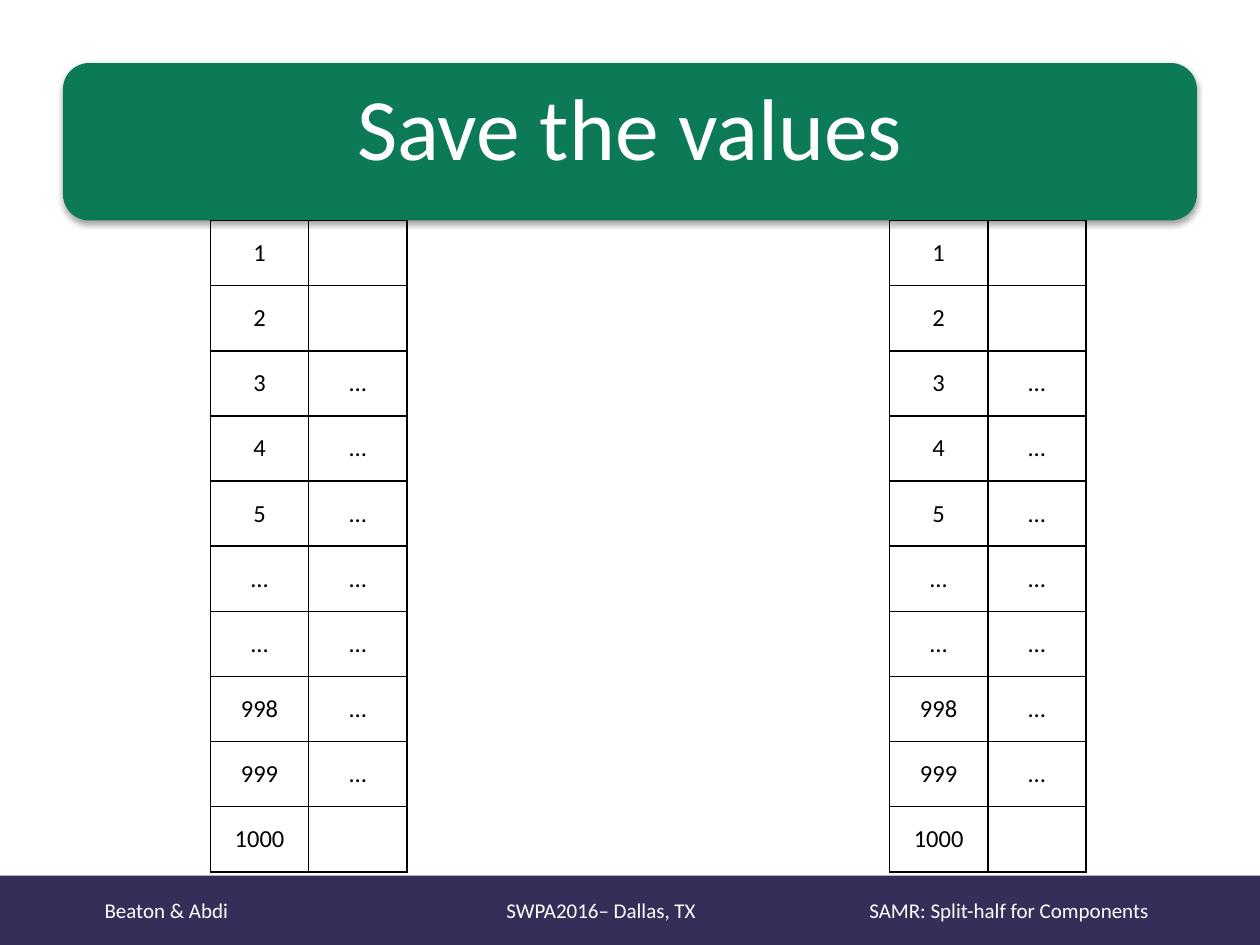
import dataclasses

import lxml.etree
import pptx
import pptx.dml.color
import pptx.enum.shapes
import pptx.enum.text
import pptx.oxml
import pptx.oxml.ns
import pptx.util

Inches = pptx.util.Inches
Pt = pptx.util.Pt
Align = pptx.enum.text.PP_ALIGN
Anchor = pptx.enum.text.MSO_ANCHOR
Shape = pptx.enum.shapes.MSO_SHAPE


@dataclasses.dataclass(frozen=True)
class Theme:
    font: str = "Calibri"
    green: str = "0C7A57"
    purple: str = "342F59"
    light: str = "FFFFFF"
    dark: str = "000000"
    title_size: float = 50
    cell_size: float = 14
    footer_size: float = 12
    border_width: float = 1


THEME = Theme()
WIDTH, HEIGHT = 10, 7.5
BANNER = (0.5, 0.5, 9, 1.25)
FOOTER = (0, 6.95, WIDTH, 0.55)
FOOTER_STARTS = (0.83, 4.02, 6.9)
FOOTER_PARTS = ("Beaton & Abdi", "SWPA2016– Dallas, TX", "SAMR: Split-half for Components")
TABLE_TOP, COLUMN_WIDTH, ROW_HEIGHT = 1.75, 0.78, 0.517
TABLE_LEFTS = (1.67, 7.06)
LABELS = ("1", "2", "3", "4", "5", "…", "…", "998", "999", "1000")
EMPTY_ROWS = {0, 1, len(LABELS) - 1}


def color(value):
    return pptx.dml.color.RGBColor.from_string(value)


def apply_format(target, values):
    for name, value in values.items():
        setattr(target, name, value)


def set_text(frame, text, size, ink, align=Align.CENTER):
    para = frame.paragraphs[0]
    para.alignment = align
    if text:
        span = para.add_run()
        span.text = text
        font = span.font
    else:
        font = para.font
    apply_format(font, {"name": THEME.font, "size": Pt(size), "bold": False})
    font.color.rgb = color(ink)
    return para


def add_block(page, preset, place, fill):
    block = page.shapes.add_shape(preset, *map(Inches, place))
    block.shadow.inherit = False
    block.fill.solid()
    block.fill.fore_color.rgb = color(fill)
    block.line.fill.background()
    return block


def add_shadow(block):
    effects = block._element.spPr.find(pptx.oxml.ns.qn("a:effectLst"))
    effects.append(pptx.oxml.parse_xml(
        f'<a:outerShdw {pptx.oxml.ns.nsdecls("a")} blurRad="{Pt(3.1)}" dist="{Pt(1.8)}" '
        f'dir="5400000" rotWithShape="0"><a:srgbClr val="{THEME.dark}">'
        '<a:alpha val="35000"/></a:srgbClr></a:outerShdw>'))


def add_title(page, text):
    add_shadow(add_block(page, Shape.ROUNDED_RECTANGLE, BANNER, THEME.green))
    title = page.shapes.title
    apply_format(title, dict(zip(("left", "top", "width", "height"), map(Inches, BANNER))))
    apply_format(title.text_frame, {"vertical_anchor": Anchor.TOP, "word_wrap": True,
                                    "margin_top": Inches(0.08)})
    set_text(title.text_frame, text, THEME.title_size, THEME.light)
    page.shapes._spTree.append(title._element)  # in front of the banner


def add_footer(page):
    """Put the footer parts on one line, each at its own tab stop."""
    frame = add_block(page, Shape.RECTANGLE, FOOTER, THEME.purple).text_frame
    first, *others = FOOTER_STARTS
    apply_format(frame, {"vertical_anchor": Anchor.MIDDLE, "word_wrap": True,
                         "margin_left": Inches(first), "margin_right": 0})
    para = set_text(frame, "\t".join(FOOTER_PARTS), THEME.footer_size, THEME.light, Align.LEFT)
    qn = pptx.oxml.ns.qn
    tabs = lxml.etree.SubElement(para._p.get_or_add_pPr(), qn("a:tabLst"))
    for start in others:
        lxml.etree.SubElement(tabs, qn("a:tab"), pos=str(Inches(start - first)), algn="l")


def set_borders(cell):
    properties = cell._tc.get_or_add_tcPr()
    for index, side in enumerate(("lnL", "lnR", "lnT", "lnB")):
        properties.insert(index, pptx.oxml.parse_xml(
            f'<a:{side} {pptx.oxml.ns.nsdecls("a")} w="{Pt(THEME.border_width)}">'
            f'<a:solidFill><a:srgbClr val="{THEME.dark}"/></a:solidFill></a:{side}>'))


def add_value_table(page, left):
    rows = [(label, "" if index in EMPTY_ROWS else "…") for index, label in enumerate(LABELS)]
    place = (left, TABLE_TOP, 2 * COLUMN_WIDTH, len(rows) * ROW_HEIGHT)
    table = page.shapes.add_table(len(rows), 2, *map(Inches, place)).table
    apply_format(table, {"first_row": False, "horz_banding": False})
    for row, texts in zip(table.rows, rows):
        row.height = Inches(ROW_HEIGHT)
        for cell, text in zip(row.cells, texts):
            cell.vertical_anchor = Anchor.MIDDLE
            cell.fill.background()
            set_borders(cell)
            set_text(cell.text_frame, text, THEME.cell_size, THEME.dark)


def main():
    deck = pptx.Presentation()
    apply_format(deck, {"slide_width": Inches(WIDTH), "slide_height": Inches(HEIGHT)})
    page = deck.slides.add_slide(deck.slide_layouts.get_by_name("Title Only"))
    add_footer(page)
    add_title(page, "Save the values")
    for left in TABLE_LEFTS:
        add_value_table(page, left)
    deck.save("out.pptx")


if __name__ == "__main__":
    main()
